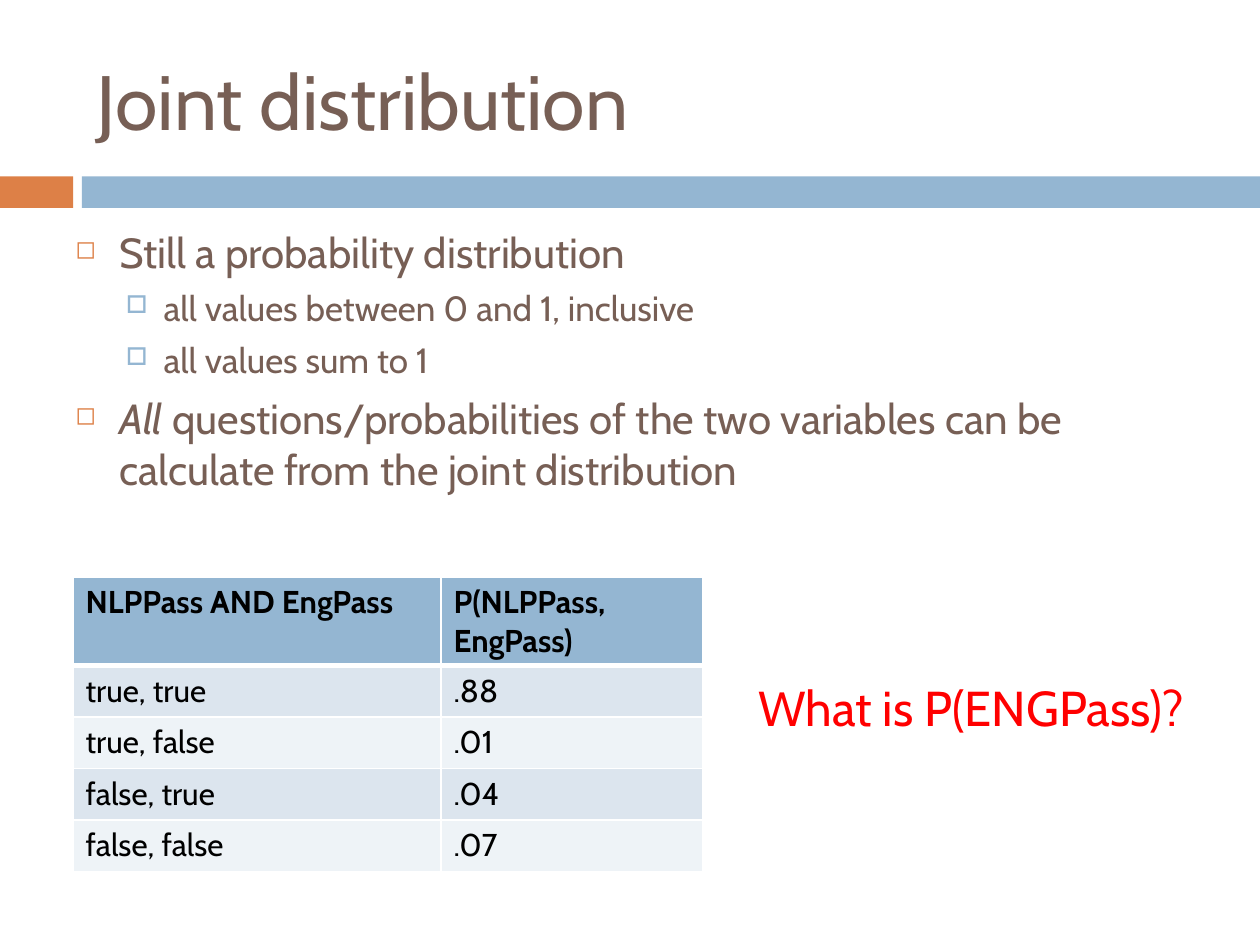
from typing import NamedTuple

from lxml import etree
from pptx import Presentation
from pptx.dml.color import RGBColor
from pptx.enum.shapes import MSO_SHAPE
from pptx.enum.text import MSO_ANCHOR
from pptx.oxml.ns import qn
from pptx.util import Inches, Pt

RECT = MSO_SHAPE.RECTANGLE
MIDDLE = MSO_ANCHOR.MIDDLE
TOP = MSO_ANCHOR.TOP
FONT = "Cabin"
BROWN = RGBColor(0x77, 0x5F, 0x55)
ORANGE = RGBColor(0xDD, 0x80, 0x47)
BLUE = RGBColor(0x94, 0xB6, 0xD2)
PALE = RGBColor(0xDC, 0xE5, 0xEE)
LIGHT = RGBColor(0xEE, 0xF3, 0xF7)
WHITE = RGBColor(0xFF, 0xFF, 0xFF)
BLACK = RGBColor(0, 0, 0)
RED = RGBColor(0xFF, 0, 0)


class Box(NamedTuple):
    left: float
    top: float
    width: float
    height: float

    def place(self) -> list:
        return [Inches(v) for v in self]


class Style(NamedTuple):
    size: int
    color: RGBColor
    bold: bool = False


class Level(NamedTuple):
    style: Style
    left: float
    hang: float
    before: float
    mark: str
    color: RGBColor
    scale: int


class Run(NamedTuple):
    text: str
    italic: bool = False


class Item(NamedTuple):
    level: Level
    runs: list


MAIN = Level(Style(24, BROWN), 0.35, 0.35, 7, "◻", ORANGE, 60)
SUB = Level(Style(20, BROWN), 0.7, 0.3, 5.5, "□", BLUE, 70)

BARS = [(Box(0, 1.4, 0.58, 0.25), ORANGE), (Box(0.65, 1.4, 9.35, 0.25), BLUE)]
ITEMS = [
    Item(MAIN, [Run("Still a probability distribution")]),
    Item(SUB, [Run("all values between 0 and 1, inclusive")]),
    Item(SUB, [Run("all values sum to 1")]),
    Item(MAIN, [
        Run("All", True),
        Run(" questions/probabilities of the two variables can be "
            "calculate from the joint distribution"),
    ]),
]
ROWS = [
    ("NLPPass AND EngPass", "P(NLPPass, EngPass)"),
    ("true, true", ".88"),
    ("true, false", ".01"),
    ("false, true", ".04"),
    ("false, false", ".07"),
]
COLS = [2.92, 2.08]
ROW = 0.41


def add_run(para, run: Run, style: Style) -> None:
    part = para.add_run()
    part.text = run.text
    font = part.font
    font.name = FONT
    font.size = Pt(style.size)
    font.bold = style.bold
    font.italic = run.italic
    font.color.rgb = style.color


def add_bar(slide, box: Box, color: RGBColor) -> None:
    bar = slide.shapes.add_shape(RECT, *box.place())
    bar.shadow.inherit = False
    bar.fill.solid()
    bar.fill.fore_color.rgb = color
    bar.line.fill.background()


def add_frame(slide, box: Box, anchor=TOP):
    frame = slide.shapes.add_textbox(*box.place()).text_frame
    frame.word_wrap = True
    frame.vertical_anchor = anchor
    return frame


def add_line(slide, box: Box, text: str, style: Style, anchor=TOP) -> None:
    frame = add_frame(slide, box, anchor)
    add_run(frame.paragraphs[0], Run(text), style)


def set_mark(para, level: Level) -> None:
    para.space_before = Pt(level.before)
    props = para._p.get_or_add_pPr()
    props.set("marL", str(Inches(level.left)))
    props.set("indent", str(-Inches(level.hang)))
    tint = etree.SubElement(props, qn("a:buClr"))
    etree.SubElement(tint, qn("a:srgbClr"), val=str(level.color))
    etree.SubElement(props, qn("a:buSzPct"), val=str(level.scale * 1000))
    etree.SubElement(props, qn("a:buChar"), char=level.mark)


def add_list(slide, box: Box, items: list) -> None:
    frame = add_frame(slide, box)
    for i, item in enumerate(items):
        para = frame.add_paragraph() if i else frame.paragraphs[0]
        set_mark(para, item.level)
        for run in item.runs:
            add_run(para, run, item.level.style)


def set_edges(cell, base: int) -> None:
    props = cell._tc.get_or_add_tcPr()
    for side, width in (("L", 1), ("R", 1), ("T", 1), ("B", base)):
        edge = etree.SubElement(props, qn(f"a:ln{side}"), w=str(Pt(width)))
        fill = etree.SubElement(edge, qn("a:solidFill"))
        etree.SubElement(fill, qn("a:srgbClr"), val=str(WHITE))


def add_grid(slide, left: float, top: float) -> None:
    box = Box(left, top, sum(COLS), ROW * len(ROWS))
    grid = slide.shapes.add_table(len(ROWS), len(COLS), *box.place()).table
    for col, width in zip(grid.columns, COLS):
        col.width = Inches(width)
    for r, row in enumerate(ROWS):
        head = r == 0
        color = BLUE if head else PALE if r % 2 else LIGHT
        for c, text in enumerate(row):
            cell = grid.cell(r, c)
            set_edges(cell, 3 if head else 1)
            cell.fill.solid()
            cell.fill.fore_color.rgb = color
            para = cell.text_frame.paragraphs[0]
            add_run(para, Run(text), Style(18, BLACK, head))


def main() -> None:
    deck = Presentation()
    deck.slide_width = Inches(10)
    deck.slide_height = Inches(7.5)
    slide = deck.slides.add_slide(deck.slide_layouts[6])
    for box, color in BARS:
        add_bar(slide, box, color)
    add_line(slide, Box(0.67, 0.25, 8.92, 1.08), "Joint distribution",
             Style(44, BROWN), MIDDLE)
    add_list(slide, Box(0.5, 1.75, 9, 3.17), ITEMS)
    add_grid(slide, 0.58, 4.58)
    add_line(slide, Box(5.92, 5.33, 4.25, 0.57), "What is P(ENGPass)?",
             Style(28, RED))
    deck.save("out.pptx")


if __name__ == "__main__":
    main()
